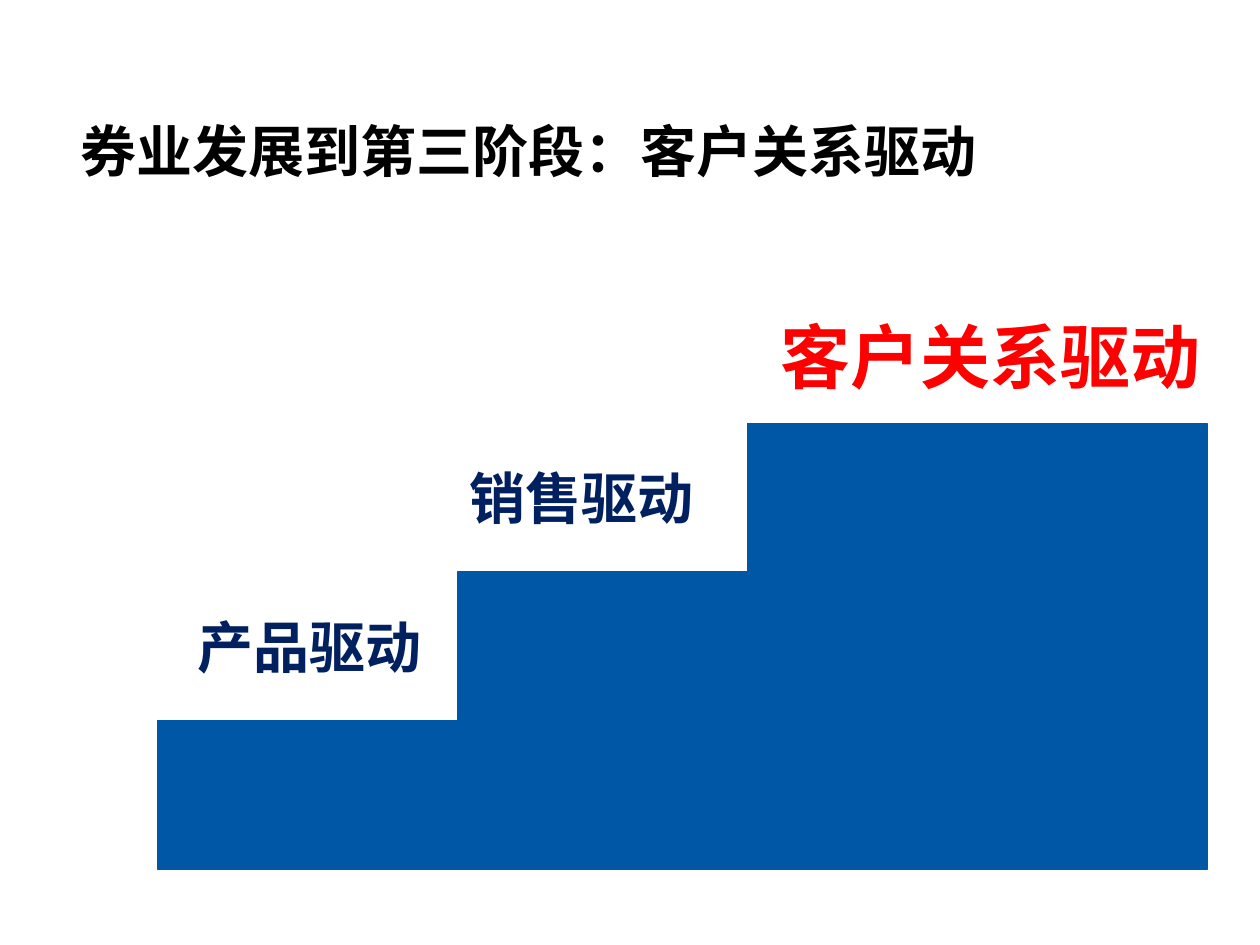
from dataclasses import dataclass

from lxml import etree
from pptx import Presentation
from pptx.dml.color import RGBColor
from pptx.enum.shapes import MSO_SHAPE
from pptx.enum.text import MSO_ANCHOR, MSO_AUTO_SIZE, PP_ALIGN
from pptx.oxml.ns import qn
from pptx.util import Inches, Pt

RECT = MSO_SHAPE.RECTANGLE
TOP = MSO_ANCHOR.TOP
LEFT = PP_ALIGN.LEFT
NO_FIT = MSO_AUTO_SIZE.NONE

BLACK = RGBColor(0x00, 0x00, 0x00)
BLUE = RGBColor(0x00, 0x57, 0xA6)
NAVY = RGBColor(0x00, 0x20, 0x60)
RED = RGBColor(0xFF, 0x00, 0x00)
CJK = "Noto Sans CJK SC"

# Staircase grid, in inches
STAIR_RIGHT = 9.58
STAIR_BOTTOM = 6.9
RISE = 1.18
LABEL_W = 3.9
LABEL_LIFT = 0.91  # label top above its step


@dataclass
class Step:
    label: str
    left: float
    label_left: float
    size: int = 32
    color: RGBColor = NAVY
    lift: float = LABEL_LIFT
    label_h: float = 0.64


STEPS = [
    Step("产品驱动", 1.25, 1.47),
    Step("销售驱动", 3.63, 3.63),
    Step("客户关系驱动", 5.93, 6.1, 40, RED, 0.92, 0.77),
]


def write(shape, text: str, size: int, color: RGBColor, font: str) -> None:
    """Put one bold, left-aligned line at the top of a shape."""
    tf = shape.text_frame
    tf.word_wrap = True
    tf.auto_size = NO_FIT
    tf.vertical_anchor = TOP
    tf.text = text
    p = tf.paragraphs[0]
    p.alignment = LEFT
    r = p.runs[0]
    r.font.size = Pt(size)
    r.font.bold = True
    r.font.color.rgb = color
    r.font.name = font
    ea = etree.SubElement(r.font._element, qn("a:ea"))
    ea.set("typeface", font)


def draw_step(slide, step: Step, level: int) -> None:
    """Draw one stair and the label standing on it."""
    top = STAIR_BOTTOM - RISE * (level + 1)
    sp = slide.shapes.add_shape(
        RECT, Inches(step.left), Inches(top),
        Inches(STAIR_RIGHT - step.left), Inches(RISE))
    sp.shadow.inherit = False
    sp.fill.solid()
    sp.fill.fore_color.rgb = BLUE
    sp.line.color.rgb = BLUE
    sp.line.width = Pt(0.75)

    box = slide.shapes.add_textbox(
        Inches(step.label_left), Inches(top - step.lift),
        Inches(LABEL_W), Inches(step.label_h))
    write(box, step.label, step.size, step.color, CJK)


def main() -> None:
    prs = Presentation()
    prs.slide_width, prs.slide_height = Inches(10), Inches(7.5)
    s = prs.slides.add_slide(prs.slide_layouts[5])

    # Title
    title = s.shapes.title
    title.left, title.top = Inches(0.54), Inches(0.61)
    title.width, title.height = Inches(8.91), Inches(1.82)
    write(title, "券业发展到第三阶段：客户关系驱动", 32, BLACK, "Arial")
    title.text_frame.paragraphs[0].line_spacing = 1.5

    # Staircase, lowest step first
    for level, step in enumerate(STEPS):
        draw_step(s, step, level)

    prs.save("out.pptx")


if __name__ == "__main__":
    main()
